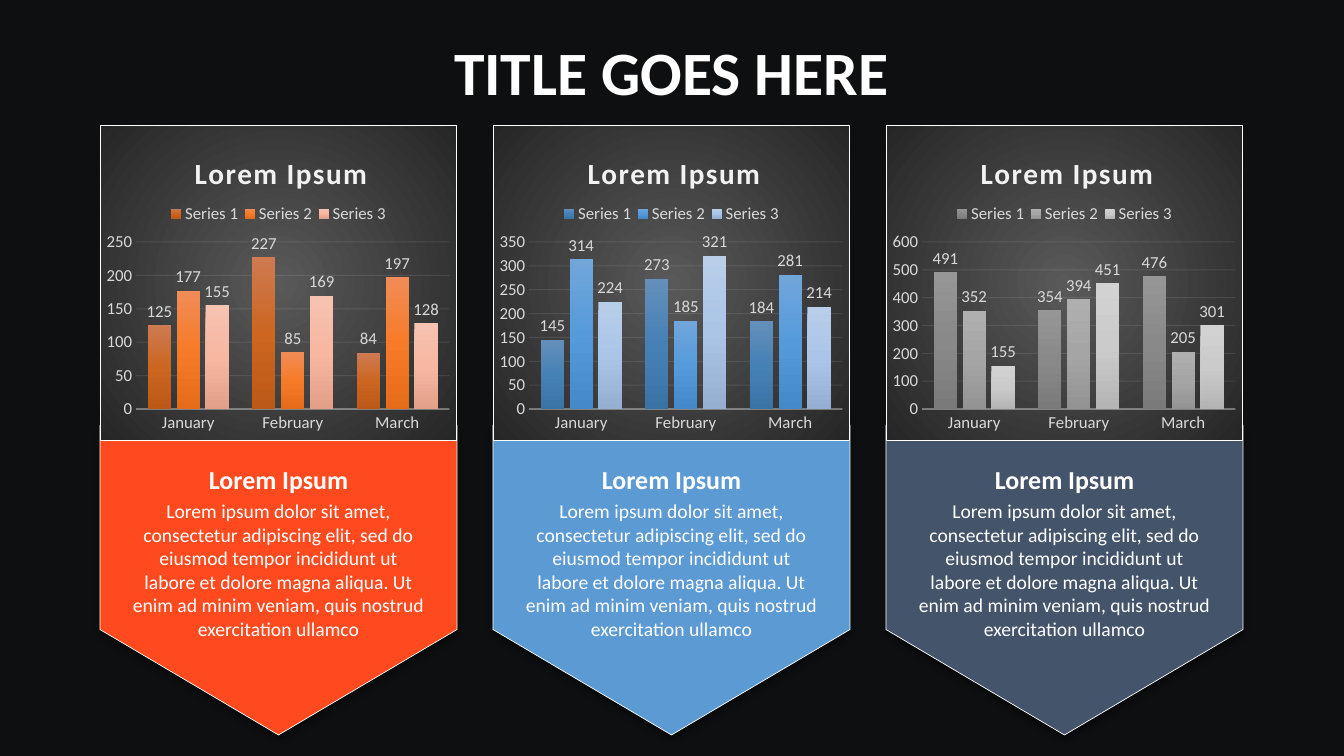
from lxml import etree
from pptx import Presentation
from pptx import util as u
from pptx.chart.data import CategoryChartData
from pptx.dml.color import RGBColor
from pptx.enum import chart as ch, shapes, text
from pptx.oxml import parse_xml
from pptx.oxml.ns import nsdecls, qn

# Content
TITLE = "TITLE GOES HERE"
HEADING = "Lorem Ipsum"
BODY = ("Lorem ipsum dolor sit amet, consectetur adipiscing elit, sed do eiusmod "
        "tempor incididunt ut labore et dolore magna aliqua. Ut enim ad minim "
        "veniam, quis nostrud exercitation ullamco")
MONTHS = ["January", "February", "March"]
# Each panel: arrow colour, axis maximum, axis step, (values, bar gradient) per series
PANELS = [
    ("FE4A1E", 250, 50, [
        ((125, 227, 84), ("CE7A52", "CC6621", "BC5916")),
        ((177, 85, 197), ("F18C57", "F67B28", "E56C19")),
        ((155, 169, 128), ("F6C3B1", "F7B7A1", "E2A089"))]),
    ("5C9AD3", 350, 50, [
        ((145, 273, 184), ("658FBA", "4681B6", "3A73A6")),
        ((314, 185, 281), ("71A6DB", "559BDB", "448ACA")),
        ((224, 321, 214), ("B8CEE9", "AAC5E8", "94AFD2"))]),
    ("44546B", 600, 100, [
        ((491, 354, 476), ("969696", "898989", "7A7A7A")),
        ((352, 394, 205), ("AFAFAF", "A5A5A5", "939393")),
        ((155, 451, 301), ("D2D2D2", "CBCBCB", "B4B4B4"))]),
]
FONT, WHITE, LABEL, AXIS = "Calibri", "FFFFFF", "D9D9D9", "F2F2F2"

# Geometry in px
SLIDE_W, SLIDE_H = 1344, 756
LEFT, PITCH, PANEL_W = 100, 393, 357
CHART_TOP, CHART_H = 125, 316
ARROW_TOP, ARROW_H = 425, 310
COPY_INSET, COPY_TOP, COPY_H = 22, 459, 188


def px(*lengths):
    return [round(n * 12192000 / SLIDE_W) for n in lengths]


def rgb(code):
    return RGBColor.from_string(code)


def style(font, size, color, bold=False):
    font.name, font.size, font.bold = FONT, u.Pt(size), bold
    font.color.rgb = rgb(color)


def add_run(paragraph, words, size, color, bold=False):
    run = paragraph.add_run()
    run.text = words
    style(run.font, size, color, bold)


def gradient(colors, direction):
    step = 100000 // (len(colors) - 1)
    stops = "".join(f'<a:gs pos="{i * step}"><a:srgbClr val="{c}"/></a:gs>'
                    for i, c in enumerate(colors))
    return f'<a:gradFill {nsdecls("a")}><a:gsLst>{stops}</a:gsLst>{direction}</a:gradFill>'


def place(part, index, x, y, w=None, h=None, inner=False):
    """Give a chart part a fixed place, as fractions of the chart."""
    for old in part.findall(qn("c:layout")):
        part.remove(old)
    layout = etree.Element(qn("c:layout"))
    manual = etree.SubElement(layout, qn("c:manualLayout"))
    entries = [("layoutTarget", "inner")] if inner else []
    entries += [("xMode", "edge"), ("yMode", "edge"), ("x", x), ("y", y)]
    entries += [("w", w), ("h", h)] if w else []
    for tag, value in entries:
        etree.SubElement(manual, qn("c:" + tag)).set("val", str(value))
    part.insert(index, layout)


def set_alpha(color_nodes, percent):
    for node in color_nodes:
        etree.SubElement(node, qn("a:alpha")).set("val", str(percent * 1000))


def add_arrow(slide, left, color):
    arrow = slide.shapes.add_shape(shapes.MSO_SHAPE.DOWN_ARROW,
                                   *px(left, ARROW_TOP, PANEL_W, ARROW_H))
    arrow.adjustments[0], arrow.adjustments[1] = 1, 0.34
    arrow.fill.solid()
    arrow.fill.fore_color.rgb = rgb(color)
    arrow.line.color.rgb = rgb(WHITE)
    arrow.line.width = u.Pt(0.5)
    arrow.shadow.inherit = False
    effects = arrow._element.spPr.find(qn("a:effectLst"))
    effects.append(parse_xml(
        f'<a:outerShdw {nsdecls("a")} blurRad="{u.Pt(4)}" dist="{u.Pt(3)}" dir="5400000" '
        'rotWithShape="0"><a:srgbClr val="000000"><a:alpha val="40000"/></a:srgbClr></a:outerShdw>'))


def add_copy(slide, left):
    frame = slide.shapes.add_textbox(
        *px(left + COPY_INSET, COPY_TOP, PANEL_W - 2 * COPY_INSET, COPY_H)).text_frame
    frame.word_wrap = True
    heading, body = frame.paragraphs[0], frame.add_paragraph()
    heading.alignment = body.alignment = text.PP_ALIGN.CENTER
    add_run(heading, HEADING, 18.5, WHITE, True)
    body.space_before = u.Pt(2.8)
    add_run(body, BODY, 14, WHITE)


def add_columns(slide, left, top_value, step, series_rows):
    data = CategoryChartData()
    data.categories = MONTHS
    for number, (values, _) in enumerate(series_rows, 1):
        data.add_series(f"Series {number}", values)
    chart = slide.shapes.add_chart(ch.XL_CHART_TYPE.COLUMN_CLUSTERED,
                                   *px(left, CHART_TOP, PANEL_W, CHART_H), data).chart
    style(chart.font, 12, LABEL)
    root = chart._chartSpace

    # Title and legend
    heading = chart.chart_title.text_frame.paragraphs[0]
    add_run(heading, HEADING, 21, AXIS, True)
    heading.runs[0].font._element.set("spc", "100")
    chart.chart_title.include_in_layout = False
    place(chart.chart_title._element, 1, 0.25, 0.07)
    chart.has_legend = True
    chart.legend.position = ch.XL_LEGEND_POSITION.TOP
    chart.legend.include_in_layout = False
    style(chart.legend.font, 12, LABEL)
    place(chart.legend._element, 1, 0.18, 0.24, 0.64, 0.08)

    # Axes
    months, scale = chart.category_axis, chart.value_axis
    for axis in (months, scale):
        axis.major_tick_mark = axis.minor_tick_mark = ch.XL_TICK_MARK.NONE
        style(axis.tick_labels.font, 12, LABEL)
    months.format.line.color.rgb = rgb(AXIS)
    months.format.line.width = u.Pt(1)
    scale.minimum_scale, scale.maximum_scale, scale.major_unit = 0, top_value, step
    scale.format.line.fill.background()
    grid = scale.major_gridlines.format.line
    grid.color.rgb = rgb(AXIS)
    grid.width = u.Pt(0.75)
    set_alpha(root.xpath(".//c:catAx/c:spPr//a:srgbClr"), 54)
    set_alpha(root.xpath(".//c:majorGridlines//a:srgbClr"), 10)

    # Columns
    plot = chart.plots[0]
    plot.gap_width, plot.overlap, plot.vary_by_categories = 100, -24, False
    for series, (_, colors) in zip(plot.series, series_rows):
        series._element.get_or_add_spPr().append(
            parse_xml(gradient(colors, '<a:lin ang="5400000" scaled="0"/>')))
        labels = series.data_labels
        labels.show_value = True
        labels.position = ch.XL_LABEL_POSITION.OUTSIDE_END
        style(labels.font, 12, LABEL)
    place(root.xpath("c:chart/c:plotArea")[0], 0, 0.1, 0.37, 0.88, 0.53, inner=True)

    # Backdrop
    glow = gradient(("595959", "262626"), '<a:path path="circle"><a:fillToRect '
                    'l="50000" t="50000" r="50000" b="50000"/></a:path>')
    root.find(qn("c:chart")).addnext(parse_xml(
        f'<c:spPr {nsdecls("c", "a")}>{glow}<a:ln w="{u.Pt(0.5)}"><a:solidFill>'
        f'<a:srgbClr val="{WHITE}"/></a:solidFill></a:ln></c:spPr>'))


def main():
    deck = Presentation()
    deck.slide_width, deck.slide_height = px(SLIDE_W, SLIDE_H)
    slide = deck.slides.add_slide(deck.slide_layouts[5])
    slide.background.fill.solid()
    slide.background.fill.fore_color.rgb = rgb("0E0F11")

    # Title
    title = slide.shapes.title
    title.left, title.top, title.width, title.height = px(368, 28, 607, 85)
    title.text_frame.vertical_anchor = text.MSO_ANCHOR.MIDDLE
    title.text_frame.paragraphs[0].alignment = text.PP_ALIGN.CENTER
    add_run(title.text_frame.paragraphs[0], TITLE, 44, WHITE, True)

    # Panels
    for column, (color, top_value, step, series_rows) in enumerate(PANELS):
        left = LEFT + column * PITCH
        add_arrow(slide, left, color)
        add_copy(slide, left)
        add_columns(slide, left, top_value, step, series_rows)

    deck.save("out.pptx")


if __name__ == "__main__":
    main()
